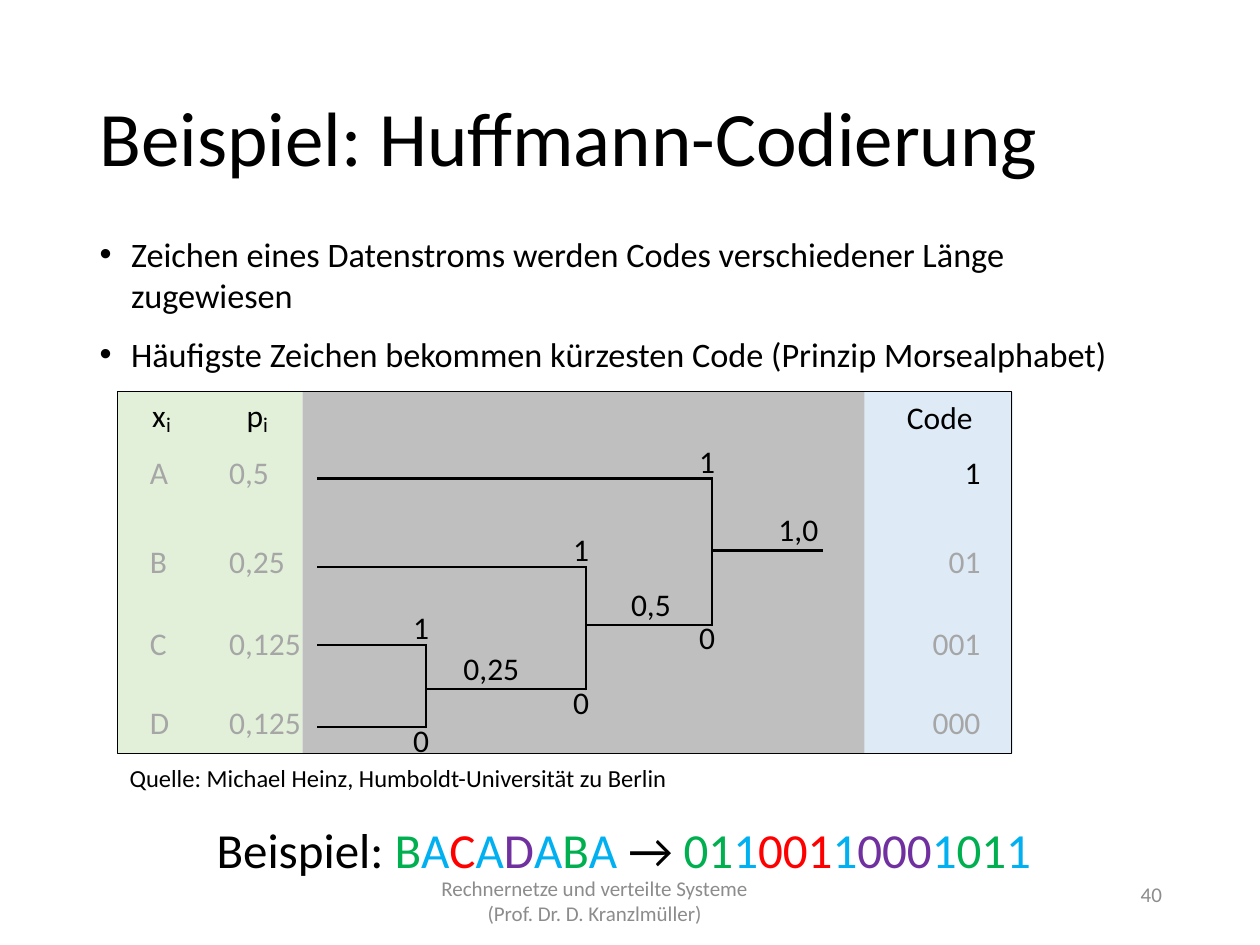
from dataclasses import dataclass

from pptx import Presentation
from pptx.dml.color import RGBColor
from pptx.enum.shapes import MSO_CONNECTOR, MSO_SHAPE
from pptx.enum.text import MSO_ANCHOR, MSO_AUTO_SIZE, PP_ALIGN
from pptx.oxml.ns import qn
from pptx.util import Emu, Pt

PX = 9144


@dataclass(frozen=True)
class Theme:
    """Colours, font and type sizes of the slide."""
    font: str = "Calibri"
    black: str = "000000"
    muted: str = "A6A6A6"
    footer: str = "8C8C8C"
    tree: str = "BFBFBF"
    source: str = "E2F0D9"
    code: str = "DEEBF7"
    green: str = "00B050"
    blue: str = "00B0F0"
    red: str = "FF0000"
    purple: str = "7030A0"
    title_size: float = 44
    example_size: float = 28
    body_size: float = 19.6
    label_size: float = 18
    source_size: float = 14
    small_size: float = 12


THEME = Theme()
ROWS = [
    ("A", "0,5", "1", 355, 380, 565, THEME.blue),
    ("B", "0,25", "01", 425, 450, 465, THEME.green),
    ("C", "0,125", "001", 490, 512, 338, THEME.red),
    ("D", "0,125", "000", 553, 577, 338, THEME.purple),
]
MERGES = [
    (338, 512, 547, 577, 465, "0,25", 358),
    (465, 450, 496, 547, 565, "0,5", 491),
    (565, 380, 437, 496, 652, "1,0", 608),
]


def apply(target, **values):
    """Set each given value as an attribute of the target."""
    for name, value in values.items():
        setattr(target, name, value)


def px(*lengths):
    """Turn lengths in px into EMU."""
    return [Emu(length * PX) for length in lengths]


class SlideBuilder:
    """Draws elements in one style on the current slide."""

    def __init__(self, slide, theme):
        self.slide = slide
        self.theme = theme

    def fill_paragraph(self, paragraph, runs, size, **layout):
        """Fill a paragraph with (text, colour) runs."""
        apply(paragraph, **layout)
        for text, color in runs:
            run = paragraph.add_run()
            apply(run, text=text)
            apply(run.font, name=self.theme.font, size=Pt(size))
            run.font.color.rgb = RGBColor.from_string(color)

    def place(self, placeholder, left, top, width, height, anchor):
        """Move a template placeholder and return its fixed text frame."""
        left, top, width, height = px(left, top, width, height)
        apply(placeholder, left=left, top=top, width=width, height=height)
        apply(placeholder.text_frame, auto_size=MSO_AUTO_SIZE.NONE,
              vertical_anchor=anchor, word_wrap=True)
        return placeholder.text_frame

    def title(self, text, *box):
        """Fill the title placeholder."""
        frame = self.place(self.slide.shapes.title, *box, MSO_ANCHOR.MIDDLE)
        self.fill_paragraph(frame.paragraphs[0], [(text, self.theme.black)],
                            self.theme.title_size, alignment=PP_ALIGN.LEFT, line_spacing=0.9)

    def bullets(self, texts, *box):
        """Fill the body placeholder with a bullet list."""
        frame = self.place(self.slide.placeholders[1], *box, MSO_ANCHOR.TOP)
        for index, text in enumerate(texts):
            paragraph = frame.add_paragraph() if index else frame.paragraphs[0]
            properties = paragraph._p.get_or_add_pPr()
            properties.set("marL", str(25 * PX))
            properties.set("indent", str(-25 * PX))
            self.fill_paragraph(paragraph, [(text, self.theme.black)], self.theme.body_size,
                                space_before=Pt(10 if index else 0))

    def text(self, runs, size, left, top, width, height, wrap=True, **layout):
        """Add a text box with one paragraph and return its frame."""
        frame = self.slide.shapes.add_textbox(*px(left, top, width, height)).text_frame
        frame.word_wrap = wrap
        self.fill_paragraph(frame.paragraphs[0], runs, size, **layout)
        return frame

    def label(self, text, left, top, color=None, width=None):
        """Add an unwrapped diagram label, sized by its characters."""
        width = width or 20 + sum(6 if character == "," else 13 for character in text)
        self.text([(text, color or self.theme.black)], self.theme.label_size,
                  left, top, width, 40, wrap=False)

    def rectangle(self, *box, fill=None):
        """Add a filled panel, or a thin frame when no fill is given."""
        shape = self.slide.shapes.add_shape(MSO_SHAPE.RECTANGLE, *px(*box))
        shape.shadow.inherit = False
        if fill:
            shape.fill.solid()
            shape.fill.fore_color.rgb = RGBColor.from_string(fill)
            shape.line.fill.background()
        else:
            shape.fill.background()
            shape.line.color.rgb = RGBColor.from_string(self.theme.black)
            shape.line.width = Pt(0.5)

    def line(self, *ends):
        """Add a tree line without a shadow."""
        connector = self.slide.shapes.add_connector(MSO_CONNECTOR.STRAIGHT, *px(*ends))
        connector.line.color.rgb = RGBColor.from_string(self.theme.black)
        connector.line.width = Pt(1.5)
        properties = connector._element.spPr
        properties.append(properties.makeelement(qn("a:effectLst"), {}))

    def footer(self, lines, number):
        """Add the two footer lines and the page number."""
        theme = self.theme
        frame = self.text([(lines[0], theme.footer)], theme.small_size, 331, 695, 338, 40,
                          alignment=PP_ALIGN.CENTER)
        frame.vertical_anchor = MSO_ANCHOR.MIDDLE
        frame.paragraphs[0]._p.get_or_add_pPr().set("marR", str(56 * PX))
        self.fill_paragraph(frame.add_paragraph(), [(lines[1], theme.footer)],
                            theme.small_size, alignment=PP_ALIGN.CENTER)
        self.text([(number, theme.footer)], theme.small_size, 834, 695, 98, 30,
                  alignment=PP_ALIGN.RIGHT)

    def code_table(self):
        """Draw the panels, column heads and symbol rows."""
        theme = self.theme
        self.rectangle(240, 311, 447, 287, fill=theme.tree)
        self.rectangle(93, 311, 147, 287, fill=theme.source)
        self.rectangle(686, 311, 118, 287, fill=theme.code)
        self.rectangle(93, 311, 710, 287)
        for head, left, index_left in (("x", 111, 122), ("p", 186, 199)):
            self.label(head, left, 309)
            self.text([("i", theme.black)], theme.small_size, index_left, 322, 24, 30, wrap=False)
        self.label("Code", 710, 311, width=73)
        for symbol, probability, code, top, *_ in ROWS:
            self.label(symbol, 109, top, theme.muted, width=35)
            self.label(probability, 172, top, theme.muted)
            color = theme.black if symbol == "A" else theme.muted
            self.text([(code, color)], theme.label_size, 700, top, 88, 40,
                      alignment=PP_ALIGN.RIGHT)

    def tree(self):
        """Draw the Huffman tree from leaves to root."""
        for *_, leaf, joint, _ in ROWS:
            self.line(252, leaf, joint + 1, leaf)
        for joint, upper, middle, lower, end, value, value_left in MERGES:
            self.line(joint, middle, joint, upper - 1)
            self.line(joint, lower + 1, joint, middle)
            self.line(joint, middle, end + 1, middle)
            self.label("1", joint - 20, upper - 34)
            self.label("0", joint - 20, lower - 10)
            self.label(value, value_left, middle - 37)

    def example(self, word, *box):
        """Add a word and its code, coloured by symbol."""
        theme = self.theme
        colors = {row[0]: row[-1] for row in ROWS}
        codes = {row[0]: row[2] for row in ROWS}
        runs = [("Beispiel: ", theme.black)]
        runs += [(symbol, colors[symbol]) for symbol in word]
        runs.append((" → ", theme.black))
        runs += [(codes[symbol], colors[symbol]) for symbol in word]
        self.text(runs, theme.example_size, *box, alignment=PP_ALIGN.CENTER, line_spacing=1.1)


def main():
    """Build and save the slide."""
    presentation = Presentation()
    presentation.slide_width, presentation.slide_height = px(1000, 750)
    slide = presentation.slides.add_slide(presentation.slide_layouts[1])
    builder = SlideBuilder(slide, THEME)
    builder.title("Beispiel: Huffmann-Codierung", 69, 40, 862, 145)
    builder.bullets([
        "Zeichen eines Datenstroms werden Codes verschiedener Länge zugewiesen",
        "Häufigste Zeichen bekommen kürzesten Code (Prinzip Morsealphabet)",
    ], 69, 180, 862, 159)
    builder.footer(["Rechnernetze und verteilte Systeme", "(Prof. Dr. D. Kranzlmüller)"], "40")
    builder.text([("Quelle: Michael Heinz, Humboldt-Universität zu Berlin", THEME.black)],
                 THEME.source_size, 93, 601, 451, 34, wrap=False)
    builder.code_table()
    builder.tree()
    builder.example("BACADABA", 64, 641, 862, 62)
    presentation.save("out.pptx")


if __name__ == "__main__":
    main()
